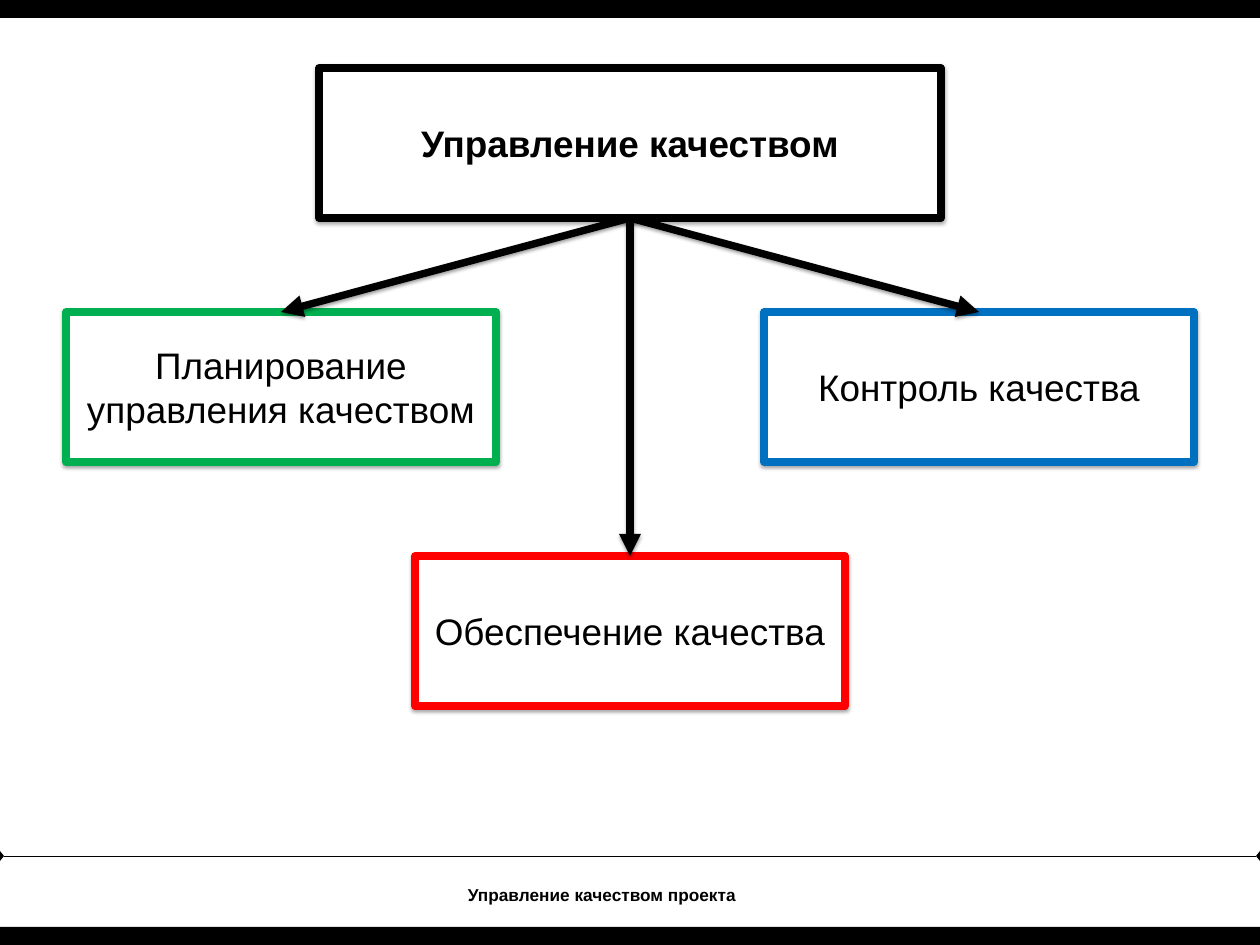
from pptx import Presentation
from pptx import util as u
from pptx.dml.color import RGBColor
from pptx.enum import shapes, text
from pptx.oxml import parse_xml
from pptx.oxml.ns import nsdecls, qn

BLACK = RGBColor(0x00, 0x00, 0x00)
WHITE = RGBColor(0xFF, 0xFF, 0xFF)
RED = RGBColor(0xFF, 0x00, 0x00)
GREEN = RGBColor(0x00, 0xB0, 0x50)
BLUE = RGBColor(0x00, 0x70, 0xC0)

PX = 10332
WIDTH, HEIGHT = 1260, 945
CENTER = WIDTH // 2
BAR_HEIGHT = 18
RULE_Y = 856
BOX_WIDTH, BOX_HEIGHT = 430, 150
SIDE_OFFSET = 349


class Diagram:
    font = "Arial"
    thick = 6

    def __init__(self, presentation):
        self.slide = presentation.slides.add_slide(presentation.slide_layouts[6])
        self.shapes = self.slide.shapes

    def px(self, *lengths):
        return [u.Emu(length * PX) for length in lengths]

    def set_words(self, frame, words, size, bold):
        formats = {"word_wrap": True, "vertical_anchor": text.MSO_ANCHOR.MIDDLE}
        for name, value in formats.items():
            setattr(frame, name, value)
        paragraph = frame.paragraphs[0]
        paragraph.text = words
        paragraph.alignment = text.PP_ALIGN.CENTER
        formats = {"name": self.font, "size": u.Pt(size), "bold": bold}
        for name, value in formats.items():
            setattr(paragraph.font, name, value)
        paragraph.font.color.rgb = BLACK

    def effects(self, element, distance=0, alpha=0):
        properties = element.spPr
        effects = properties.find(qn("a:effectLst"))
        if effects is None:
            effects = parse_xml(f"<a:effectLst {nsdecls('a')}/>")
            properties.append(effects)
        if alpha:
            effects.append(parse_xml(
                f'<a:outerShdw {nsdecls("a")} blurRad="40000" dist="{distance}" '
                'dir="5400000" rotWithShape="0"><a:srgbClr val="000000">'
                f'<a:alpha val="{alpha}"/></a:srgbClr></a:outerShdw>'))

    def plain(self, kind, left, top, width, height, fill=BLACK, rotation=0):
        shape = self.shapes.add_shape(kind, *self.px(left, top, width, height))
        shape.shadow.inherit = False
        shape.fill.solid()
        shape.fill.fore_color.rgb = fill
        shape.line.fill.background()
        shape.rotation = rotation
        return shape

    def box(self, words, center, top, color, width=BOX_WIDTH, bold=False):
        shape = self.plain(shapes.MSO_SHAPE.RECTANGLE, center - width // 2, top,
                           width, BOX_HEIGHT, WHITE)
        shape.line.color.rgb = color
        shape.line.width = u.Pt(self.thick)
        self.effects(shape._element, 23000, 35000)
        self.set_words(shape.text_frame, words, 30, bold)
        return shape

    def label(self, words, left, top, width, height, size):
        frame = self.shapes.add_textbox(*self.px(left, top, width, height)).text_frame
        for side in ("left", "top", "right", "bottom"):
            setattr(frame, f"margin_{side}", 0)
        self.set_words(frame, words, size, True)

    def line(self, x1, y1, x2, y2, weight):
        connector = self.shapes.add_connector(
            shapes.MSO_CONNECTOR.STRAIGHT, *self.px(x1, y1, x2, y2))
        connector.line.color.rgb = BLACK
        connector.line.width = u.Pt(weight)
        self.effects(connector._element)
        return connector

    def arrow(self, parent, child):
        connector = self.line(0, 0, 0, 0, self.thick)
        connector.begin_connect(parent, 2)
        connector.end_connect(child, 0)
        element = connector._element
        element.spPr.find(qn("a:ln")).append(
            parse_xml(f'<a:tailEnd {nsdecls("a")} type="triangle"/>'))
        self.effects(element, 20000, 38000)


def main():
    presentation = Presentation()
    presentation.slide_width = u.Emu(WIDTH * PX)
    presentation.slide_height = u.Emu(HEIGHT * PX)
    diagram = Diagram(presentation)

    for top in (0, HEIGHT - BAR_HEIGHT):
        diagram.plain(shapes.MSO_SHAPE.RECTANGLE, 0, top, WIDTH, BAR_HEIGHT)
    diagram.label("Управление качеством проекта", 142, 880, 920, 30, 14)
    diagram.line(4, RULE_Y, WIDTH - 4, RULE_Y, 0.5)
    for left, rotation in ((-3, 90), (WIDTH - 7, 270)):
        diagram.plain(shapes.MSO_SHAPE.ISOSCELES_TRIANGLE, left, RULE_Y - 2, 10, 4,
                      rotation=rotation)

    management = diagram.box("Управление качеством", CENTER, 68, BLACK, 622, True)
    processes = [diagram.box(*process) for process in (
        ("Обеспечение качества", CENTER, 556, RED),
        ("Планирование управления качеством", CENTER - SIDE_OFFSET, 312, GREEN),
        ("Контроль качества", CENTER + SIDE_OFFSET, 312, BLUE),
    )]
    for process in processes:
        diagram.arrow(management, process)

    presentation.save("out.pptx")


if __name__ == "__main__":
    main()
